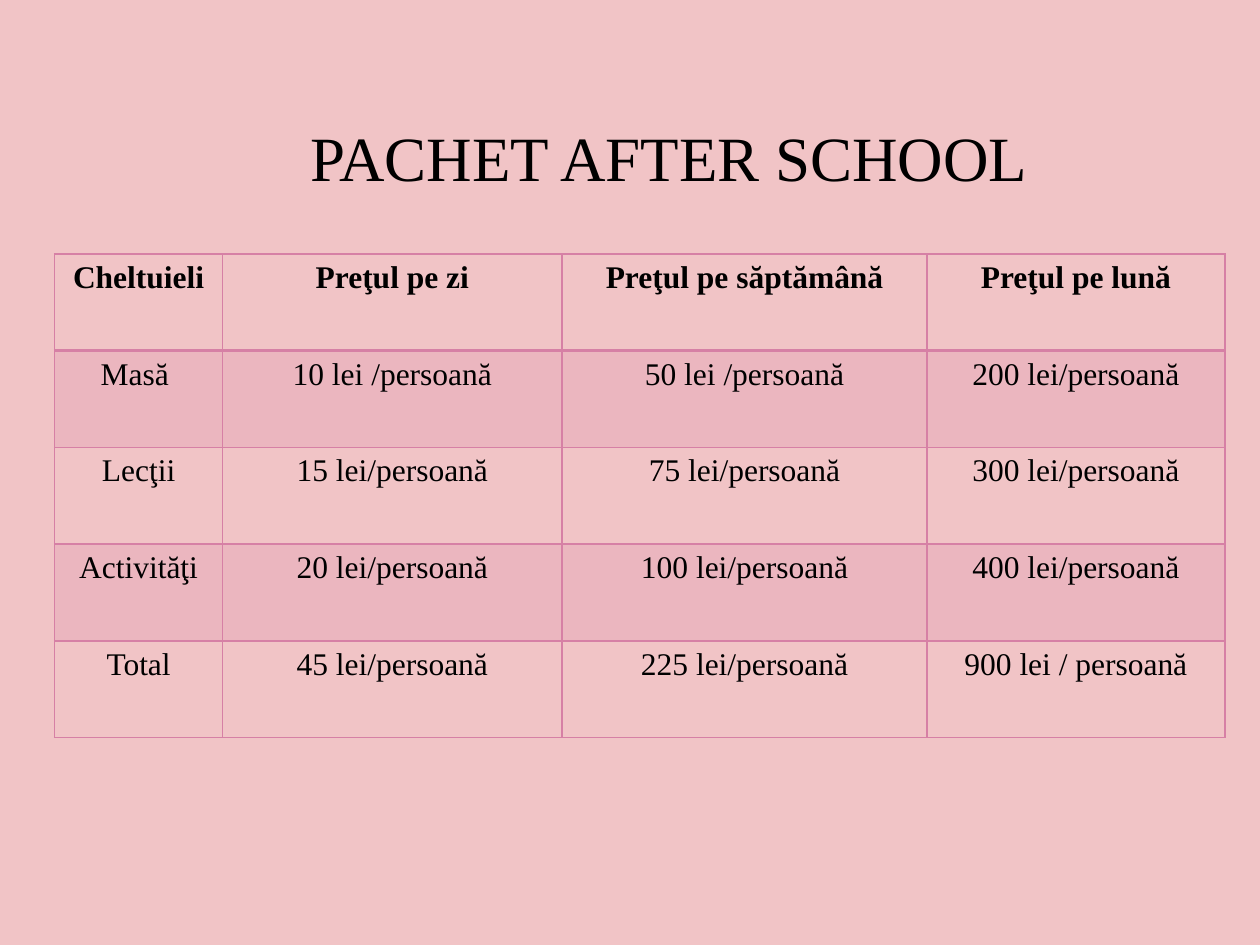
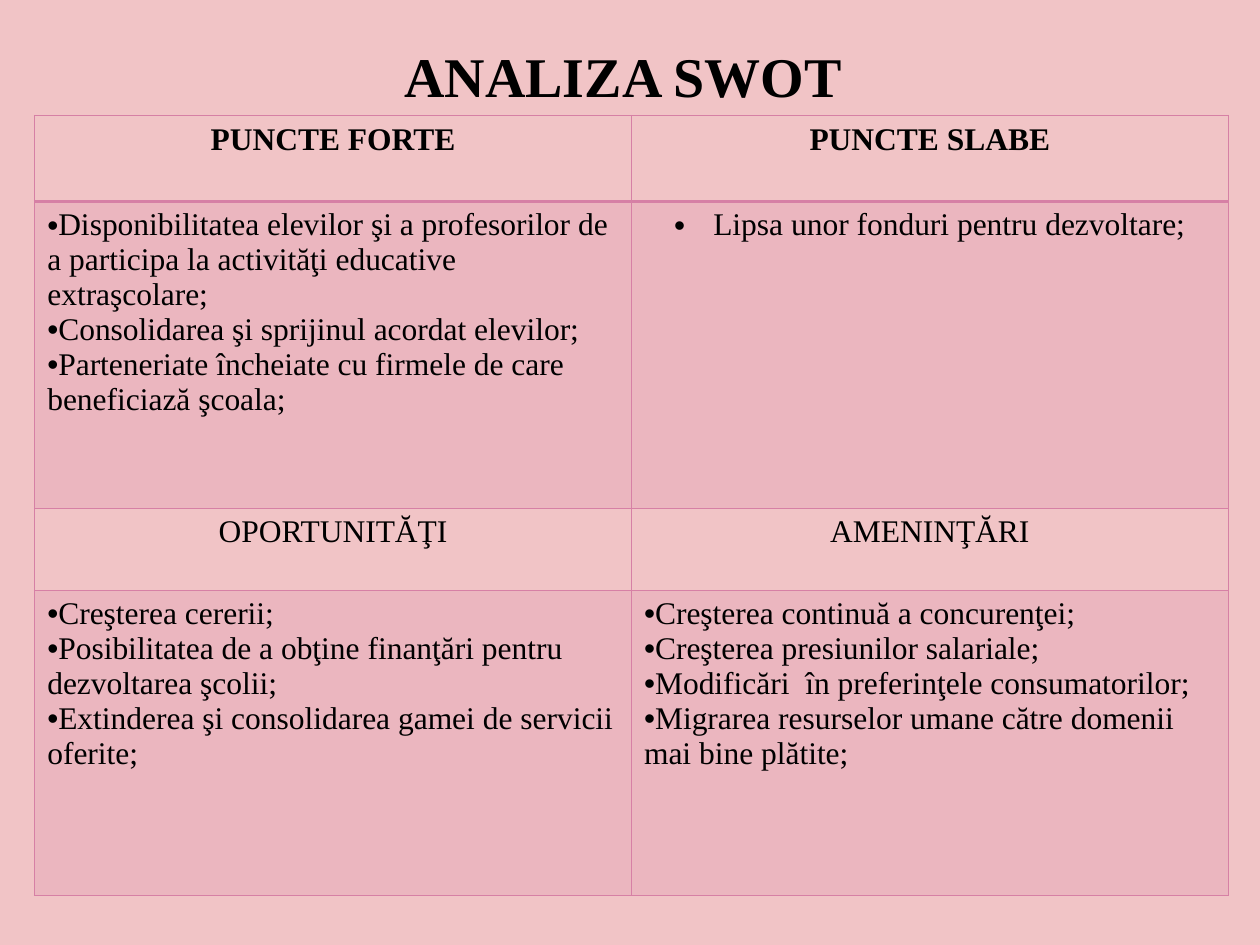
from dataclasses import dataclass

from lxml import etree
from pptx import Presentation
from pptx.dml.color import RGBColor
from pptx.enum.text import MSO_ANCHOR, PP_ALIGN
from pptx.oxml.ns import qn
from pptx.presentation import Presentation as PresentationType
from pptx.slide import Slide
from pptx.table import _Cell
from pptx.text.text import TextFrame
from pptx.util import Cm, Pt

LEFT = PP_ALIGN.LEFT
CENTER = PP_ALIGN.CENTER
BOTTOM = MSO_ANCHOR.BOTTOM

BACKGROUND = RGBColor(0xF1, 0xC4, 0xC6)
ACCENT = RGBColor(0xD6, 0x80, 0xA5)
BLACK = RGBColor(0x00, 0x00, 0x00)
FONT = "Times New Roman"
BAND_OPACITY = 20
THIN, THICK = 1, 2
BLANK_LAYOUT = 6


@dataclass(frozen=True)
class Title:
    text: str
    left: float
    top: float
    width: float
    height: float
    size: int
    bold: bool = False
    alignment: PP_ALIGN = LEFT


@dataclass(frozen=True)
class Entry:
    lines: tuple[str, ...]
    bulleted: bool = False
    alignment: PP_ALIGN = CENTER
    hanging: float = 0


@dataclass(frozen=True)
class Grid:
    left: float
    top: float
    columns: tuple[float, ...]
    rows: tuple[float, ...]
    entries: tuple[tuple[Entry, ...], ...]


def label(text: str) -> Entry:
    return Entry((text,))


def bullets(*lines: str) -> Entry:
    return Entry(lines, bulleted=True, alignment=LEFT)


PRICE_TITLE = Title("PACHET AFTER SCHOOL", 5.89, 1.52, 15.19, 2.54, 36, alignment=CENTER)
PRICE_ROWS = (
    ("Cheltuieli", "Preţul pe zi", "Preţul pe săptămână", "Preţul pe lună"),
    ("Masă ", "10 lei /persoană", "50 lei /persoană", "200 lei/persoană"),
    ("Lecţii", "15 lei/persoană", "75 lei/persoană", "300 lei/persoană"),
    ("Activităţi", "20 lei/persoană", "100 lei/persoană", "400 lei/persoană"),
    ("Total", "45 lei/persoană", "225 lei/persoană", "900 lei / persoană"),
)
PRICE_GRID = Grid(
    1.1, 5.12, (3.39, 6.84, 7.36, 6), (1.95,) * len(PRICE_ROWS),
    tuple(tuple(label(text) for text in row) for row in PRICE_ROWS),
)

SWOT_TITLE = Title("ANALIZA SWOT", 7.9, 0, 9.75, 2.34, 32, bold=True)
SWOT_GRID = Grid(
    0.7, 2.33, (12.03, 12.03), (1.73, 6.19, 1.65, 6.15),
    (
        (label("PUNCTE FORTE"), label("PUNCTE SLABE")),
        (
            bullets(
                "Disponibilitatea elevilor şi a profesorilor de a participa la activităţi educative extraşcolare;",
                "Consolidarea şi sprijinul acordat elevilor;",
                "Parteneriate încheiate cu firmele de care beneficiază şcoala;",
            ),
            Entry(("Lipsa unor fonduri pentru dezvoltare;",), bulleted=True, hanging=0.79),
        ),
        (label("OPORTUNITĂŢI"), label("AMENINŢĂRI")),
        (
            bullets(
                "Creşterea cererii;",
                "Posibilitatea de a obţine finanţări pentru dezvoltarea şcolii;",
                "Extinderea şi consolidarea gamei de servicii oferite;",
            ),
            bullets(
                "Creşterea continuă a concurenţei;",
                "Creşterea presiunilor salariale;",
                "Modificări  în preferinţele consumatorilor;",
                "Migrarea resurselor umane către domenii mai bine plătite;",
            ),
        ),
    ),
)


def write_text(
    text_frame: TextFrame, lines: tuple[str, ...], *, size: int = 18, bold: bool = False,
    alignment: PP_ALIGN = LEFT, spacing: float = 1, bulleted: bool = False, hanging: float = 0,
) -> None:
    for index, line in enumerate(lines):
        paragraph = text_frame.paragraphs[0] if index == 0 else text_frame.add_paragraph()
        paragraph.alignment = alignment
        paragraph.line_spacing = spacing
        if bulleted:
            properties = paragraph._p.get_or_add_pPr()
            properties.set("marL", str(Cm(hanging)))
            properties.set("indent", str(-Cm(hanging)))
            etree.SubElement(properties, qn("a:buFont"), typeface="Arial")
            etree.SubElement(properties, qn("a:buChar"), char="•")
        run = paragraph.add_run()
        run.text = line
        run.font.name = FONT
        run.font.size = Pt(size)
        run.font.bold = bold
        run.font.color.rgb = BLACK


def add_title(slide: Slide, title: Title) -> None:
    shape = slide.shapes.add_textbox(Cm(title.left), Cm(title.top), Cm(title.width), Cm(title.height))
    shape.text_frame.word_wrap = True
    shape.text_frame.vertical_anchor = BOTTOM
    write_text(shape.text_frame, (title.text,), size=title.size, bold=title.bold,
               alignment=title.alignment, spacing=0.9)


def set_fill(cell: _Cell, banded: bool) -> None:
    if not banded:
        cell.fill.background()
        return
    cell.fill.solid()
    cell.fill.fore_color.rgb = ACCENT
    color = cell._tc.tcPr.find(f"{qn('a:solidFill')}/{qn('a:srgbClr')}")
    etree.SubElement(color, qn("a:alpha"), val=str(BAND_OPACITY * 1000))


def set_borders(cell: _Cell, top: int, bottom: int) -> None:
    widths = {"a:lnL": THIN, "a:lnR": THIN, "a:lnT": top, "a:lnB": bottom}
    for position, (tag, width) in enumerate(widths.items()):
        line = etree.Element(qn(tag), w=str(Pt(width)))
        fill = etree.SubElement(line, qn("a:solidFill"))
        etree.SubElement(fill, qn("a:srgbClr"), val=str(ACCENT))
        cell._tc.get_or_add_tcPr().insert(position, line)


def add_grid(slide: Slide, grid: Grid) -> None:
    frame = slide.shapes.add_table(
        len(grid.rows), len(grid.columns), Cm(grid.left), Cm(grid.top),
        Cm(sum(grid.columns)), Cm(sum(grid.rows)),
    )
    table = frame.table
    table.first_row = False
    table.horz_banding = False
    for column, width in zip(table.columns, grid.columns):
        column.width = Cm(width)
    for row_index, (row, height) in enumerate(zip(table.rows, grid.rows)):
        row.height = Cm(height)
        for cell, entry in zip(row.cells, grid.entries[row_index]):
            write_text(cell.text_frame, entry.lines, bold=row_index == 0, alignment=entry.alignment,
                       bulleted=entry.bulleted, hanging=entry.hanging)
            set_fill(cell, banded=row_index % 2 == 1)
            set_borders(cell, top=THICK if row_index == 1 else THIN,
                        bottom=THICK if row_index == 0 else THIN)


def add_table_slide(presentation: PresentationType, title: Title, grid: Grid) -> None:
    slide = presentation.slides.add_slide(presentation.slide_layouts[BLANK_LAYOUT])
    slide.background.fill.solid()
    slide.background.fill.fore_color.rgb = BACKGROUND
    add_grid(slide, grid)
    add_title(slide, title)


def main() -> None:
    presentation = Presentation()
    presentation.slide_width = Cm(25.4)
    presentation.slide_height = Cm(19.05)
    add_table_slide(presentation, PRICE_TITLE, PRICE_GRID)
    add_table_slide(presentation, SWOT_TITLE, SWOT_GRID)
    presentation.save("out.pptx")


if __name__ == "__main__":
    main()
